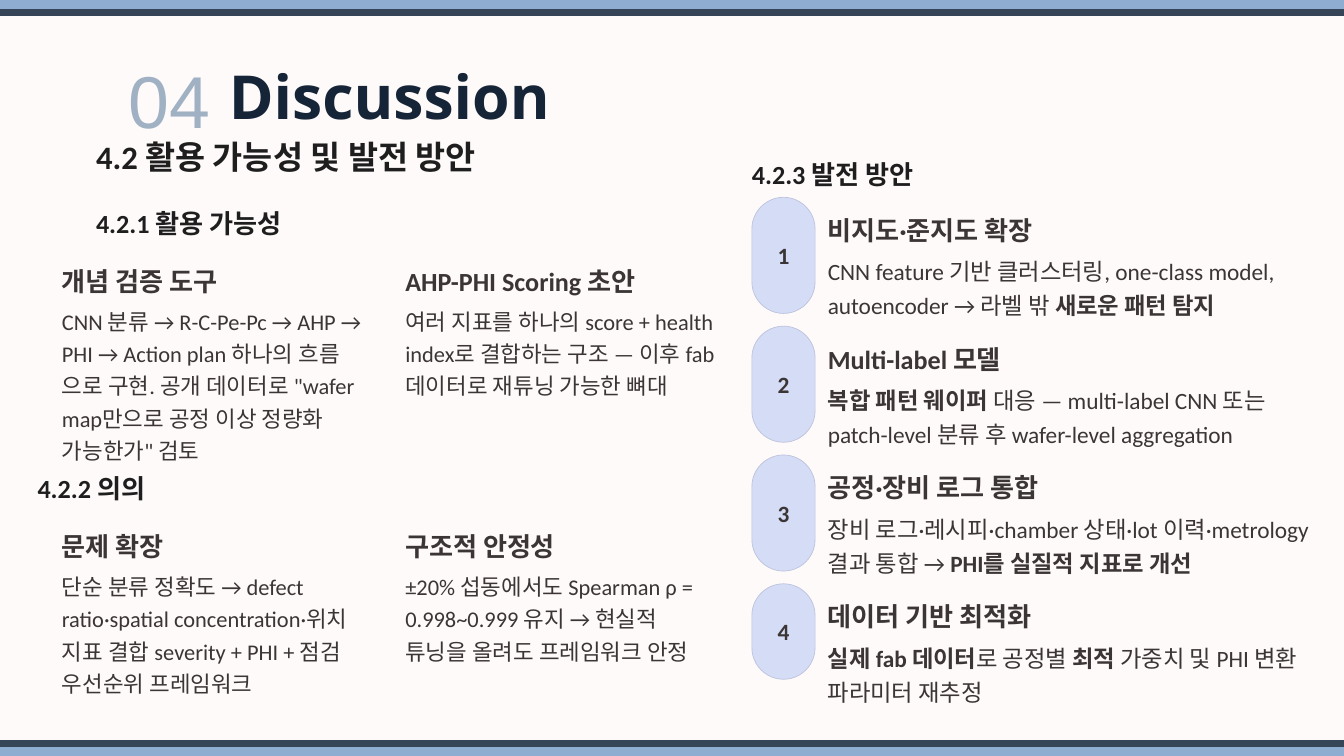
import lxml.etree
import pptx
import pptx.dml.color
import pptx.enum.shapes
import pptx.enum.text
import pptx.oxml.ns
import pptx.util

Cm = pptx.util.Cm
Pt = pptx.util.Pt
RGBColor = pptx.dml.color.RGBColor
SHAPE = pptx.enum.shapes.MSO_SHAPE
ALIGN = pptx.enum.text.PP_ALIGN
qn = pptx.oxml.ns.qn

PAPER = RGBColor(0xFF, 0xFA, 0xFA)
INK = RGBColor(0x1F, 0x1E, 0x1E)
BODY = RGBColor(0x3B, 0x35, 0x35)
NAVY = RGBColor(0x15, 0x24, 0x37)
STEEL = RGBColor(0xA0, 0xB1, 0xC4)
BAND = RGBColor(0x8F, 0xAD, 0xD1)
RULE = RGBColor(0x35, 0x44, 0x57)
PILL = RGBColor(0xD5, 0xDC, 0xF6)
PILL_EDGE = RGBColor(0xBB, 0xC2, 0xDC)

SLIDE_W, SLIDE_H = 50.8, 28.58

SECTION_HEADINGS = [
    ("4.2 활용 가능성 및 발전 방안", 3.63, 5.11, 21.44, 35),
    ("4.2.1 활용 가능성", 3.63, 7.8, 10.44, 28),
    ("4.2.2 의의", 1.42, 17.81, 10.44, 28),
    ("4.2.3 발전 방안", 28.42, 5.94, 10.44, 28),
]

# Heading, body and width of each card, row by row
CARDS = [
    [("개념 검증 도구",
      "CNN 분류 → R-C-Pe-Pc → AHP → PHI → Action plan 하나의 흐름\n"
      "으로 구현. 공개 데이터로 \"wafer map만으로 공정 이상 정량화 가능한가\" 검토", 11.73),
     ("AHP-PHI Scoring 초안",
      "여러 지표를 하나의 score + health index로 결합하는 구조 — "
      "이후 fab 데이터로 재튜닝 가능한 뼈대", 12.37)],
    [("문제 확장",
      "단순 분류 정확도 → defect ratio·spatial concentration·위치 지표 결합 "
      "severity + PHI + 점검 우선순위 프레임워크", 11.23),
     ("구조적 안정성",
      "±20% 섭동에서도 Spearman ρ = 0.998~0.999 유지 → 현실적 \n"
      "튜닝을 올려도 프레임워크 안정", 11.99)],
]
CARD_LEFTS = [2.34, 15.32]
CARD_TOPS = [9.98, 20.01]

# Heading, body runs as (text, bold), body width and pill height
STEPS = [
    ("비지도·준지도 확장",
     [("CNN feature 기반 클러스터링, one-class model, autoencoder → 라벨 밖 ", False),
      ("새로운 패턴 탐지", True)], 18.16, 4.39),
    ("Multi-label 모델",
     [("복합 패턴 웨이퍼 ", True),
      ("대응 — multi-label CNN 또는 patch-level 분류 후 wafer-level aggregation", False)],
     18.16, 4.39),
    ("공정·장비 로그 통합",
     [("장비 로그·레시피·chamber 상태·lot 이력·metrology 결과 통합 → ", False),
      ("PHI를 실질적 지표로 개선", True)], 19, 4.39),
    ("데이터 기반 최적화",
     [("실제 fab 데이터", True), ("로 공정별 ", False), ("최적 ", True),
      ("가중치 및 PHI 변환 파라미터 재추정", False)], 19, 3.61),
]
STEP_LEFT, STEP_TOP, STEP_PITCH = 28.42, 7.46, 4.87


def clear_margins(frame):
    frame.margin_left = frame.margin_right = 0
    frame.margin_top = frame.margin_bottom = 0
    frame.word_wrap = True


def add_run(paragraph, text, size, color, bold, face="Calibri"):
    run = paragraph.add_run()
    run.text = text
    font = run.font
    font.name, font.size, font.bold = face, Pt(size), bold
    font.color.rgb = color
    east_asian = lxml.etree.Element(qn("a:ea"), typeface=face)
    run._r.rPr.find(qn("a:latin")).addnext(east_asian)


def add_text(slide, box, runs, size, color, spacing, align=ALIGN.LEFT, face="Calibri"):
    """Place (text, bold) runs in a box; a newline in a run becomes a line break."""
    frame = slide.shapes.add_textbox(*map(Cm, box)).text_frame
    clear_margins(frame)
    paragraph = frame.paragraphs[0]
    paragraph.line_spacing = spacing
    paragraph.alignment = align
    for text, bold in runs:
        for number, line in enumerate(text.split("\n")):
            if number:
                paragraph.add_line_break()
            add_run(paragraph, line, size, color, bold, face)


def add_heading(slide, box, text, size=28, color=BODY):
    add_text(slide, box, [(text, True)], size, color, 1.04)


def add_edge(slide, band_top, rule_y):
    band = slide.shapes.add_shape(SHAPE.RECTANGLE, 0, Cm(band_top), Cm(SLIDE_W), Cm(0.38))
    band.shadow.inherit = False
    band.fill.solid()
    band.fill.fore_color.rgb = BAND
    band.line.fill.background()
    rule = slide.shapes.add_connector(
        pptx.enum.shapes.MSO_CONNECTOR.STRAIGHT, 0, Cm(rule_y), Cm(SLIDE_W), Cm(rule_y))
    rule.line.color.rgb = RULE
    rule.line.width = Pt(7)
    lxml.etree.SubElement(rule._element.spPr, qn("a:effectLst"))


def add_title(slide, left, top):
    add_text(slide, (left + 4.28, top + 0.4, 38.3, 2.77), [("Discussion", True)],
             65, NAVY, 1.4, face="Open Sans")
    add_text(slide, (left, top, 4.09, 3.91), [("04", False)],
             78.7, STEEL, 1.4, ALIGN.CENTER, "Arial")


def add_card(slide, left, top, width, heading, body):
    add_heading(slide, (left, top, width, 1), heading)
    add_text(slide, (left, top + 1.46, width, 4), [(body, False)], 24, BODY, 1.2)


def add_step(slide, left, top, number, heading, body, width, pill_height):
    pill = slide.shapes.add_shape(
        SHAPE.ROUNDED_RECTANGLE, Cm(left), Cm(top), Cm(2.39), Cm(pill_height))
    pill.adjustments[0] = 0.5
    pill.shadow.inherit = False
    pill.fill.solid()
    pill.fill.fore_color.rgb = PILL
    pill.line.color.rgb = PILL_EDGE
    pill.line.width = Pt(0.75)
    frame = pill.text_frame
    clear_margins(frame)
    frame.vertical_anchor = pptx.enum.text.MSO_ANCHOR.MIDDLE
    frame.paragraphs[0].alignment = ALIGN.CENTER
    add_run(frame.paragraphs[0], str(number), 25, BODY, True)
    add_heading(slide, (left + 2.87, top + 0.59, 12.24, 0.5), heading)
    add_text(slide, (left + 2.87, top + 2.07, width, 1.73), body, 25, BODY, 1.2)


def main():
    deck = pptx.Presentation()
    deck.slide_width, deck.slide_height = Cm(SLIDE_W), Cm(SLIDE_H)
    slide = deck.slides.add_slide(deck.slide_layouts[6])
    slide.background.fill.solid()
    slide.background.fill.fore_color.rgb = PAPER

    for text, left, top, width, size in SECTION_HEADINGS:
        add_heading(slide, (left, top, width, 1), text, size, INK)
    for top, row in zip(CARD_TOPS, CARDS):
        for left, (heading, body, width) in zip(CARD_LEFTS, row):
            add_card(slide, left, top, width, heading, body)
    for index, step in enumerate(STEPS):
        add_step(slide, STEP_LEFT, STEP_TOP + index * STEP_PITCH, index + 1, *step)
    add_edge(slide, SLIDE_H - 0.38, SLIDE_H - 0.48)
    add_edge(slide, 0, 0.48)
    add_title(slide, 4.37, 0.74)
    deck.save("out.pptx")


if __name__ == "__main__":
    main()
